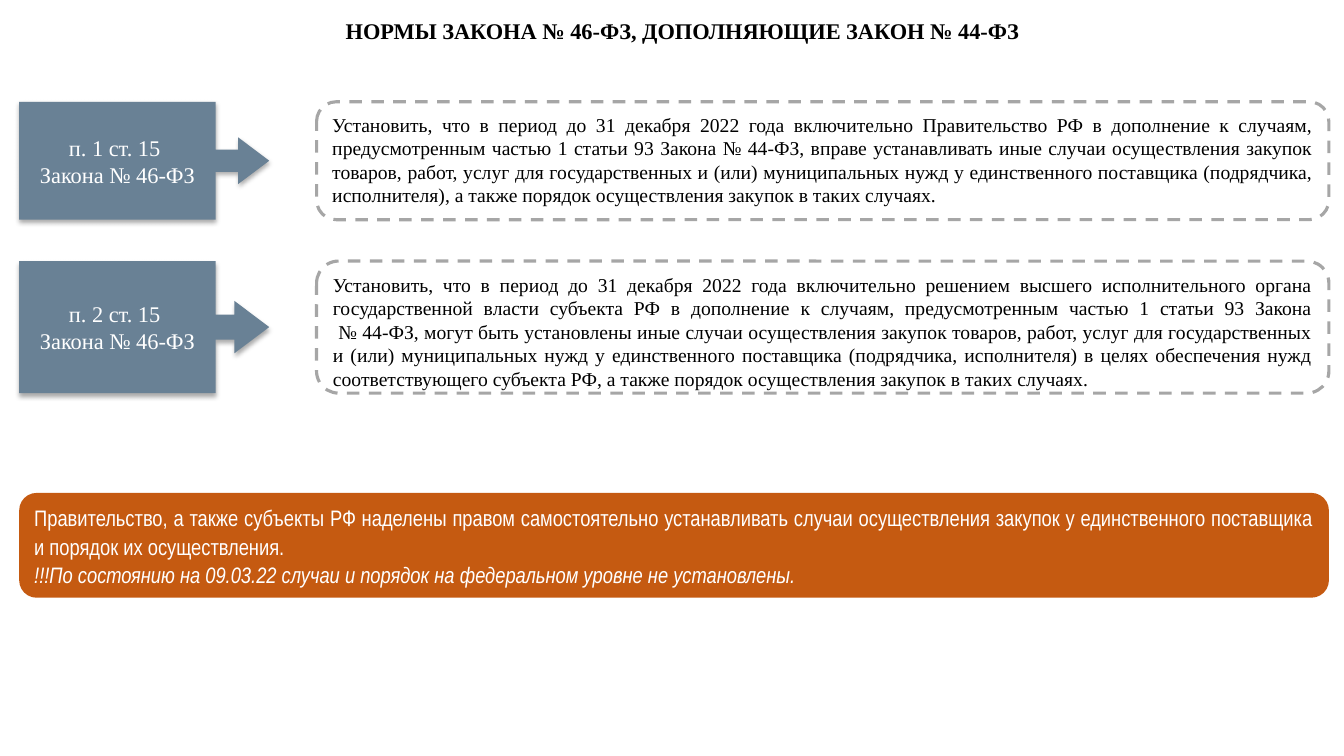
from lxml import etree
from pptx import Presentation
from pptx import util as u
from pptx.dml.color import RGBColor
from pptx.enum import dml, shapes, text
from pptx.oxml import ns

SHAPE = shapes.MSO_SHAPE
ALIGN = text.PP_ALIGN
ANCHOR = text.MSO_ANCHOR


def tint(code):
    return RGBColor.from_string(code)


class Board:
    """Draws the styled elements of one slide."""

    serif = "Times New Roman"
    narrow = "Arial Narrow"
    black, white = "000000", "FFFFFF"
    slate, rust, grey = "698195", "C55A11", "A6A6A6"

    def __init__(self, slide):
        self.items = slide.shapes

    def letter(self, item, words, size, color, align, anchor, font=serif, lead=1.0):
        frame = item.text_frame
        frame.word_wrap = True
        frame.vertical_anchor = anchor
        frame.text = words
        for para in frame.paragraphs:
            para.alignment = align
            para.line_spacing = lead
            for run in para.runs:
                run.font.name = font
                run.font.size = u.Pt(size)
                run.font.color.rgb = tint(color)
        return frame.paragraphs

    def shape(self, kind, box, fill=None):
        item = self.items.add_shape(kind, *map(u.Inches, box))
        item.shadow.inherit = False
        item.line.fill.background()
        if fill:
            item.fill.solid()
            item.fill.fore_color.rgb = tint(fill)
        else:
            item.fill.background()
        return item

    def shade(self, item):
        effects = item._element.spPr.find(ns.qn("a:effectLst"))
        outer = etree.SubElement(effects, ns.qn("a:outerShdw"), blurRad=str(u.Pt(3.5)),
                                 dist=str(u.Pt(2.2)), dir="5400000",
                                 algn="t", rotWithShape="0")
        color = etree.SubElement(outer, ns.qn("a:srgbClr"), val=self.black)
        etree.SubElement(color, ns.qn("a:alpha"), val="32000")

    def title(self, box, words):
        item = self.items.add_textbox(*map(u.Inches, box))
        paras = self.letter(item, words, 16, self.black, ALIGN.CENTER,
                            ANCHOR.BOTTOM, lead=0.9)
        paras[0].runs[0].font.bold = True

    def rule(self, box, words):
        item = self.shape(SHAPE.ROUNDED_RECTANGLE, box)
        item.line.color.rgb = tint(self.grey)
        item.line.width = u.Pt(2.25)
        item.line.dash_style = dml.MSO_LINE.DASH
        self.letter(item, words, 14, self.black, ALIGN.JUSTIFY, ANCHOR.TOP)

    def label(self, box, words):
        item = self.shape(SHAPE.RIGHT_ARROW_CALLOUT, box, self.slate)
        for index, value in enumerate((0.189, 0.198, 0.263, 0.786)):
            item.adjustments[index] = value
        self.shade(item)
        self.letter(item, words, 16, self.white, ALIGN.CENTER, ANCHOR.MIDDLE)

    def note(self, box, words):
        item = self.shape(SHAPE.ROUNDED_RECTANGLE, box, self.rust)
        paras = self.letter(item, words, 16, self.white, ALIGN.JUSTIFY,
                            ANCHOR.MIDDLE, self.narrow, 1.07)
        paras[-1].runs[0].font.italic = True


RULES = (
    (1.01, 1.17,
     "Установить, что в период до 31 декабря 2022 года включительно Правительство РФ "
     "в дополнение к случаям, предусмотренным частью 1 статьи 93 Закона № 44-ФЗ, вправе "
     "устанавливать иные случаи осуществления закупок товаров, работ, услуг для "
     "государственных и (или) муниципальных нужд у единственного поставщика (подрядчика, "
     "исполнителя), а также порядок осуществления закупок в таких случаях."),
    (2.59, 1.31,
     "Установить, что в период до 31 декабря 2022 года включительно решением высшего "
     "исполнительного органа государственной власти субъекта РФ в дополнение к случаям, "
     "предусмотренным частью 1 статьи 93 Закона\v № 44-ФЗ, могут быть установлены иные "
     "случаи осуществления закупок товаров, работ, услуг для государственных и (или) "
     "муниципальных нужд у единственного поставщика (подрядчика, исполнителя) в целях "
     "обеспечения нужд соответствующего субъекта РФ, а также порядок осуществления "
     "закупок в таких случаях."),
)


def main():
    deck = Presentation()
    deck.slide_width, deck.slide_height = u.Inches(13.33), u.Inches(7.5)
    board = Board(deck.slides.add_slide(deck.slide_layouts[6]))
    board.title((0.36, 0.05, 12.82, 0.44),
                "НОРМЫ ЗАКОНА № 46-ФЗ, ДОПОЛНЯЮЩИЕ ЗАКОН № 44-ФЗ")
    for number, (top, height, words) in enumerate(RULES, 1):
        board.rule((3.14, top, 10.04, height), words)
        board.label((0.19, top, 2.48, height),
                    f"п. {number} ст. 15 \nЗакона № 46-ФЗ")
    board.note((0.19, 4.89, 12.99, 1.04),
               "Правительство, а также субъекты РФ наделены правом самостоятельно "
               "устанавливать случаи осуществления закупок у единственного поставщика "
               "и порядок их осуществления.\n"
               "!!!По состоянию на 09.03.22 случаи и порядок на федеральном уровне "
               "не установлены.")
    deck.save("out.pptx")


if __name__ == "__main__":
    main()
